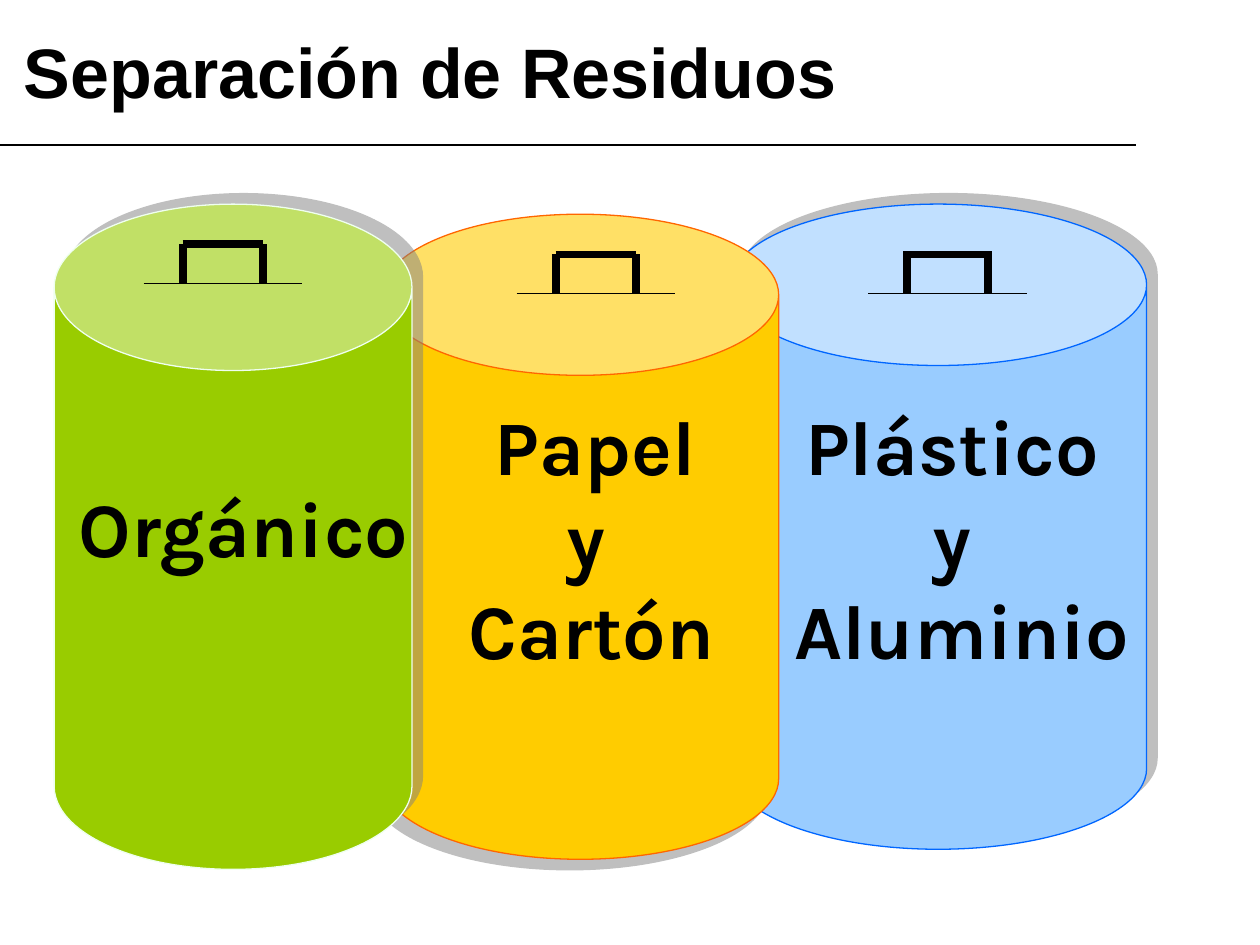
import pptx
import pptx.util
import pptx.dml.color
import pptx.enum.shapes
import pptx.enum.text
import lxml.etree

Inches = pptx.util.Inches
Pt = pptx.util.Pt
NS = "http://schemas.openxmlformats.org/drawingml/2006/main"
SHAPE = pptx.enum.shapes.MSO_SHAPE
rgb = pptx.dml.color.RGBColor.from_string


def add_text(p, text, size=44, font="Karla", color="000000", bold=True, align="CENTER"):
    p.alignment = getattr(pptx.enum.text.PP_ALIGN, align)
    r = p.add_run()
    r.text = text
    r.font.size = Pt(size)
    r.font.name = font
    r.font.bold = bold
    r.font.color.rgb = rgb(color)


def add_line(shapes, x1, y1, x2, y2, width):
    ln = shapes.add_connector(pptx.enum.shapes.MSO_CONNECTOR.STRAIGHT,
                              Inches(x1), Inches(y1), Inches(x2), Inches(y2))
    ln.line.color.rgb = rgb("000000")
    ln.line.width = Pt(width)
    lxml.etree.SubElement(ln._element.spPr, f"{{{NS}}}effectLst")


prs = pptx.Presentation()
prs.slide_width = Inches(10)
prs.slide_height = Inches(7.5)
s = prs.slides.add_slide(prs.slide_layouts[5])

title = s.shapes.title
title.left, title.top = Inches(0.09), Inches(0.18)
title.width, title.height = Inches(6.65), Inches(0.77)
tf = title.text_frame
tf.word_wrap = False
tf.auto_size = pptx.enum.text.MSO_AUTO_SIZE.SHAPE_TO_FIT_TEXT
tf.vertical_anchor = pptx.enum.text.MSO_ANCHOR.TOP
add_text(tf.paragraphs[0], "Separación de Residuos", size=40, font="Arial", align="LEFT")
add_line(s.shapes, 0, 1.15, 9.02, 1.15, 0.75)

bins = [
    dict(box=(5.79, 1.62, 3.31, 5.12), adj=0.387, fill="99CCFF", line="0066FF", shadow=315,
         label=(6.65, 3.59), words=["Plástico ", "y ", "Aluminio"], tail=False,
         handle=(7.2, 2.33), overhang=0.03),
    dict(box=(3.03, 1.7, 3.15, 5.12), adj=0.406, fill="FFCC00", line="FF6600", shadow=135,
         label=(3.74, 3.59), words=["Papel", "y ", "Cartón"], tail=True,
         handle=(4.41, 2.33), overhang=0),
    dict(box=(0.43, 1.62, 2.84, 5.28), adj=0.465, fill="99CC00", line="EFFFEF", shadow=315,
         label=(0.98, 3.51), words=["Orgánico"], tail=True,
         handle=(1.45, 2.25), overhang=0),
]

for b in bins:
    shapes = s.shapes.add_group_shape().shapes

    can = shapes.add_shape(SHAPE.CAN, *map(Inches, b["box"]))
    can.adjustments[0] = b["adj"]
    can.fill.solid()
    can.fill.fore_color.rgb = rgb(b["fill"])
    can.line.color.rgb = rgb(b["line"])
    can.line.width = Pt(0.75)
    can.shadow.inherit = False
    effects = can._element.spPr.find(f"{{{NS}}}effectLst")
    shadow = lxml.etree.SubElement(effects, f"{{{NS}}}outerShdw", dist=str(Pt(8.5)),
                                   dir=str(b["shadow"] * 60000), algn="ctr", rotWithShape="0")
    clr = lxml.etree.SubElement(shadow, f"{{{NS}}}srgbClr", val="808080")
    lxml.etree.SubElement(clr, f"{{{NS}}}alpha", val="50000")

    x, y = b["handle"]
    top, right, over = y - 0.31, x + 0.64, b["overhang"]
    add_line(shapes, x, y, x, top, 4.5)
    add_line(shapes, x - over, top, right + over, top, 4.5)
    add_line(shapes, right, top, right, y, 4.5)
    add_line(shapes, x - 0.31, y, x + 0.95, y, 0.25)

    left, top = b["label"]
    label = shapes.add_shape(SHAPE.RECTANGLE, Inches(left), Inches(top), Inches(1.97), Inches(1.34))
    label.fill.background()
    label.line.fill.background()
    label.shadow.inherit = False
    tf = label.text_frame
    tf.word_wrap = False
    tf.vertical_anchor = pptx.enum.text.MSO_ANCHOR.MIDDLE
    for i, word in enumerate(b["words"]):
        p = tf.add_paragraph() if i else tf.paragraphs[0]
        add_text(p, word)
    if b["tail"]:
        add_text(p, " ", size=18, bold=False)

prs.save("out.pptx")
